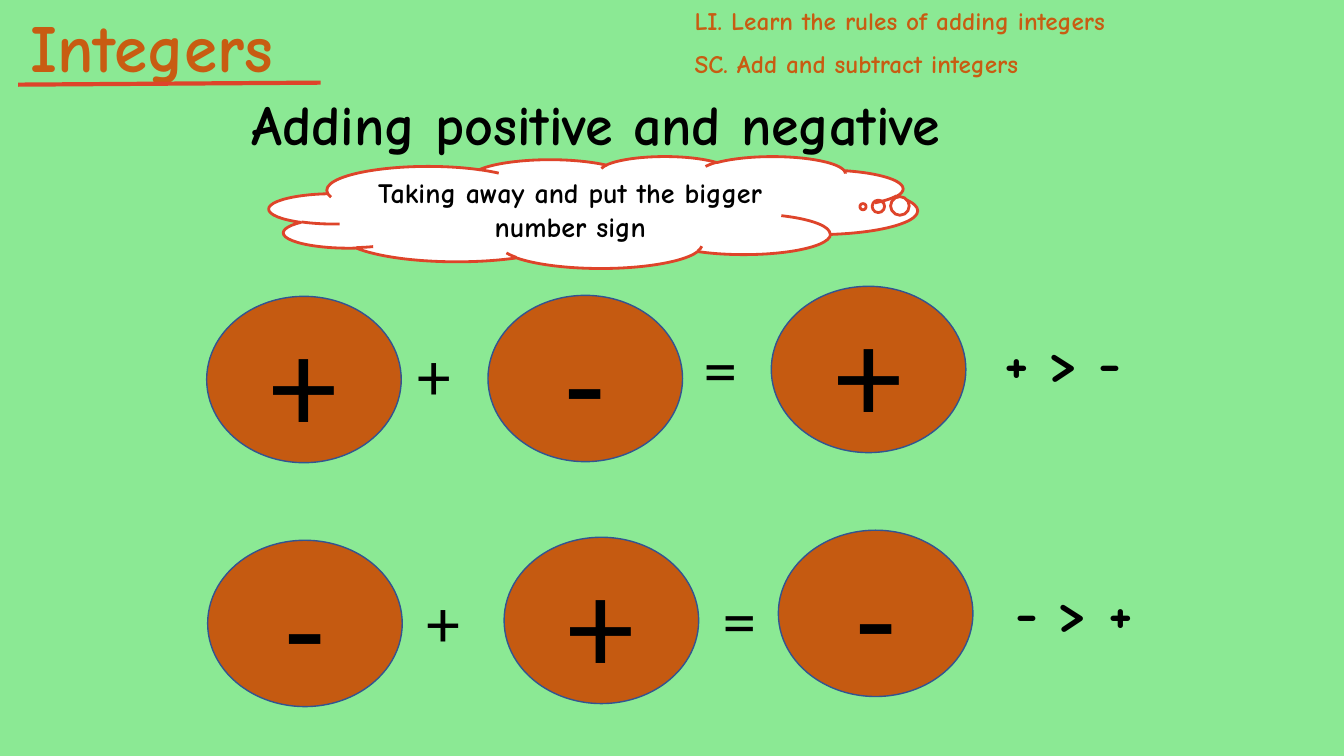
from pptx import Presentation
from pptx.dml.color import RGBColor
from pptx.enum.shapes import MSO_CONNECTOR, MSO_SHAPE
from pptx.enum.text import MSO_ANCHOR, MSO_AUTO_SIZE, PP_ALIGN
from pptx.oxml.ns import qn
from pptx.util import Inches, Pt
from lxml import etree

RECT, CLOUD = MSO_SHAPE.RECTANGLE, MSO_SHAPE.CLOUD_CALLOUT
DISC = MSO_SHAPE.FLOWCHART_CONNECTOR
LEFT, MID = PP_ALIGN.LEFT, PP_ALIGN.CENTER
TOP, CORE = MSO_ANCHOR.TOP, MSO_ANCHOR.MIDDLE

# Content
TITLE = "Integers"
GOALS = ["LI. Learn the rules of adding integers",
         "SC. Add and subtract integers"]
HEAD = "Adding positive and negative "
HINT = "Taking away and put the bigger number sign"
# Each sum: discs and operators as (sign, left, top), then the case
SUMS = [
    {"discs": [("+", 2.05, 2.94), ("-", 4.84, 2.93), ("+", 7.65, 2.84)],
     "ops": [("+", 4.04, 3.26), ("=", 6.88, 3.2)],
     "case": ("+ > -", 9.86, 3.19)},
    {"discs": [("-", 2.06, 5.36), ("+", 5, 5.33), ("-", 7.72, 5.26)],
     "ops": [("+", 4.13, 5.71), ("=", 7.07, 5.69)],
     "case": ("- > +", 9.97, 5.67)},
]
HUES = {"back": "8BE994", "title": "C85C12", "disc": "C55A11",
        "edge": "325491", "red": "DE442A", "white": "FFFFFF",
        "ink": "000000"}
HAND, PLAIN = "Comic Neue", "Calibri"
DISC_W, DISC_H = 1.93, 1.65
OP_W, OP_H = 0.93, 0.91
CASE_W, BAR_H = 1.85, 0.77

deck = Presentation()
deck.slide_width, deck.slide_height = Inches(13.33), Inches(7.5)
slide = deck.slides.add_slide(deck.slide_layouts[6])
shapes = slide.shapes


def hue(name):
    return RGBColor.from_string(HUES[name])


def write(item, text, size, font=HAND, color="ink", bold=True,
          align=LEFT, anchor=TOP, grow=True):
    frame = item.text_frame
    frame.word_wrap = True
    frame.vertical_anchor = anchor
    if grow:
        frame.auto_size = MSO_AUTO_SIZE.SHAPE_TO_FIT_TEXT
    lines = [text] if isinstance(text, str) else text
    for i, line in enumerate(lines):
        para = frame.add_paragraph() if i else frame.paragraphs[0]
        para.alignment = align
        if i:
            para.space_before = Pt(size / 2)
        run = para.add_run()
        run.text = line
        run.font.name, run.font.size = font, Pt(size)
        run.font.bold = bold
        run.font.color.rgb = hue(color)


def box(*at):
    return shapes.add_textbox(*map(Inches, at))


def form(kind, at, fill, line=None, width=1):
    item = shapes.add_shape(kind, *map(Inches, at))
    item.shadow.inherit = False
    item.fill.solid()
    item.fill.fore_color.rgb = hue(fill)
    if line:
        item.line.color.rgb = hue(line)
        item.line.width = Pt(width)
    else:
        item.line.fill.background()
    return item


# Background
slide.background.fill.solid()
slide.background.fill.fore_color.rgb = hue("back")

# Heading, title and goals
write(form(RECT, (0, 0.84, 12.02, BAR_H), "back"), HEAD, 40, align=MID)
write(box(0.2, 0, 4.07, 0.91), TITLE, 48, color="title")
write(box(6.79, 0, 6.92, 1.31), GOALS, 18, color="title")

# Title underline
rule = shapes.add_connector(MSO_CONNECTOR.STRAIGHT,
                            *map(Inches, (0.18, 0.84, 3.18, 0.82)))
rule.line.color.rgb = hue("red")
rule.line.width = Pt(3)
etree.SubElement(rule._element.spPr, qn("a:effectLst"))

# Hint cloud
cloud = form(CLOUD, (2.67, 1.55, 6.43, 1.11), "white", "red", 2)
cloud.adjustments[0], cloud.adjustments[1] = 0.416, -0.049
write(cloud, HINT, 20, align=MID, anchor=CORE, grow=False)

# Sums
for row in SUMS:
    for sign, x, y in row["discs"]:
        disc = form(DISC, (x, y, DISC_W, DISC_H), "disc", "edge")
        write(disc, sign, 96, font=PLAIN, bold=False, align=MID,
              anchor=CORE, grow=False)
    for sign, x, y in row["ops"]:
        write(box(x, y, OP_W, OP_H), sign, 48, font=PLAIN, bold=False)
    case, x, y = row["case"]
    write(form(RECT, (x, y, CASE_W, BAR_H), "back"), case, 40)

deck.save("out.pptx")
